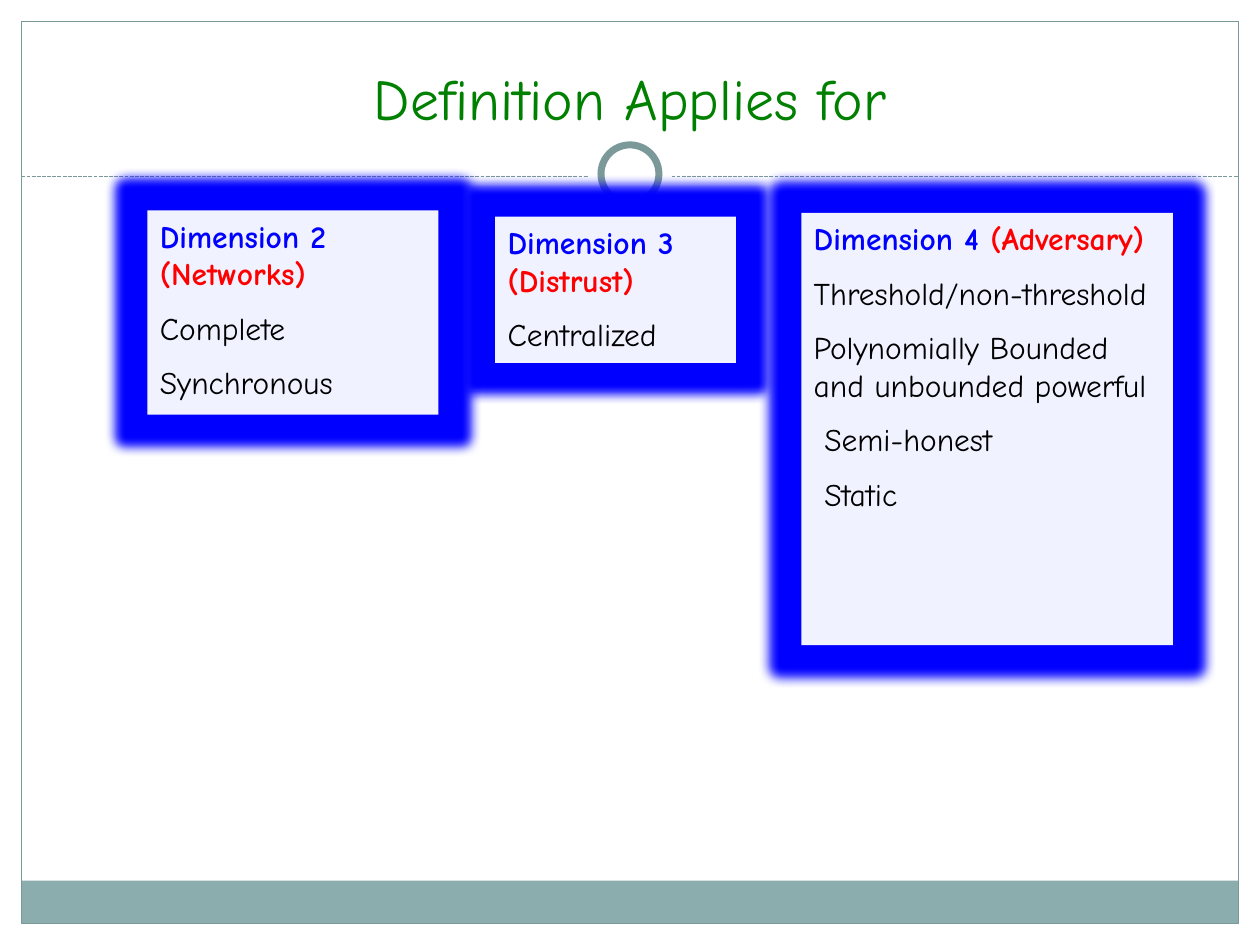
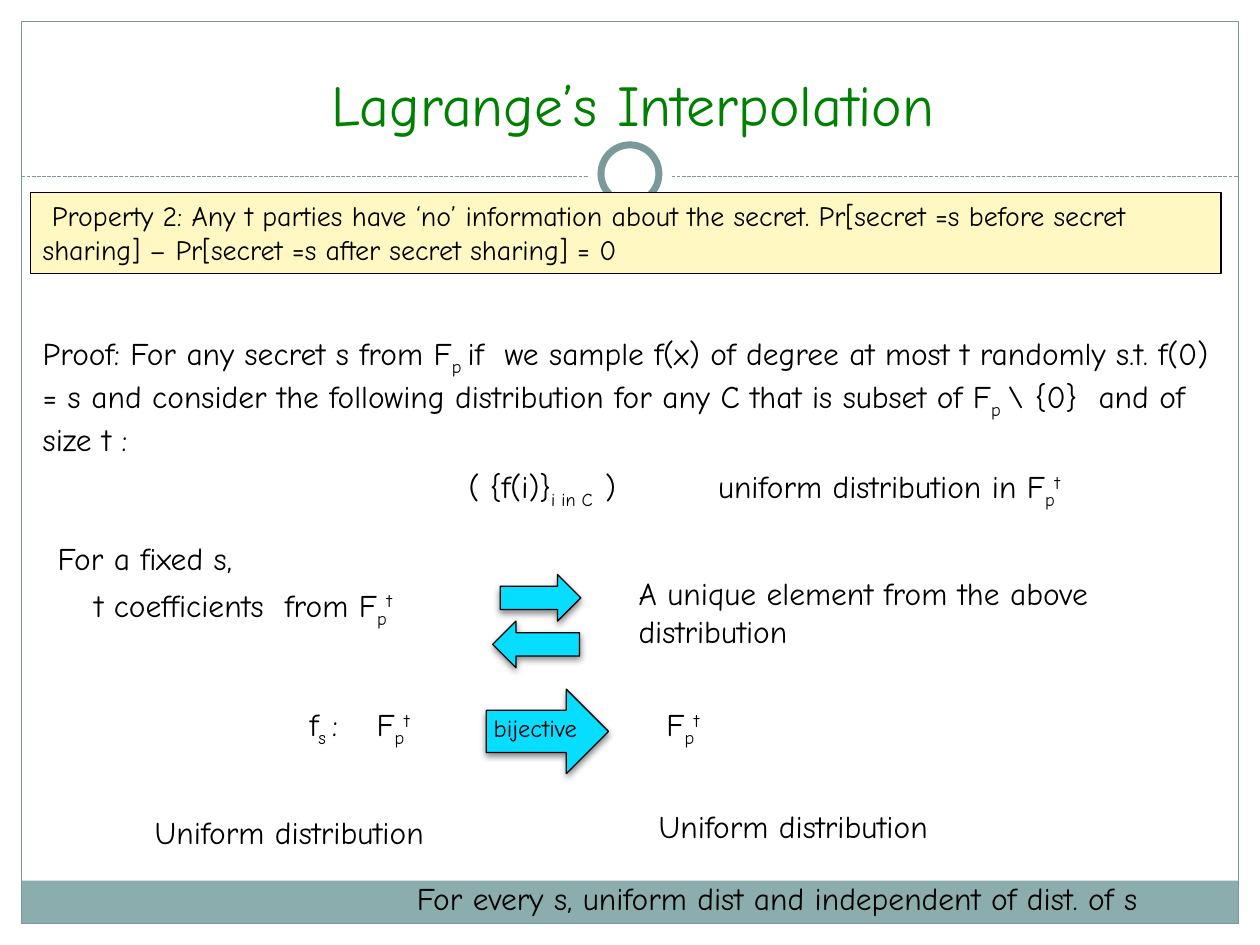
"""Build two slides on secret sharing: where the definition applies and a proof of property 2."""
from lxml.etree import SubElement
from pptx import Presentation
from pptx.dml.color import RGBColor
from pptx.enum.dml import MSO_LINE
from pptx.enum.shapes import MSO_CONNECTOR, MSO_SHAPE
from pptx.enum.text import MSO_ANCHOR, PP_ALIGN
from pptx.oxml.ns import qn
from pptx.util import Inches, Pt

WIDTH, HEIGHT = 10, 7.5
MARGIN = 0.17
RULE_Y = 1.4
FOOTER_HEIGHT = 0.34
FONT = "Comic Neue"
BLACK, WHITE, BLUE, RED, GREEN = "000000", "FFFFFF", "0000FF", "FF0000", "008000"
FRAME, FOOTER, PALE, YELLOW, CYAN = "7C999A", "8CADAE", "F0F2FF", "FFF8C2", "07DEFF"
BODY, SUB, SUP = 18, -25, 30

DIMENSIONS = [
    ("Dimension 2 ", "(Networks)", ["Complete", "Synchronous"], (1.17, 1.67, 2.31, 1.62)),
    ("Dimension 3 ", "(Distrust)", ["Centralized"], (3.93, 1.72, 1.91, 1.16)),
    ("Dimension 4 ", "(Adversary)",
     ["Threshold/non-threshold", "Polynomially Bounded and unbounded powerful",
      " Semi-honest", " Static"], (6.36, 1.69, 2.95, 3.43)),
]

PROPERTY = (" Property 2: Any t parties have ‘no’ information about the secret. "
            "Pr[secret =s before secret sharing] – Pr[secret =s after secret sharing] = 0")
FIELD_POWER = [("p", SUB), ("t", SUP)]
PROOF = [
    ([("Proof: For any secret s from F", 0), ("p ", SUB),
      ("if  we sample f(x) of degree at most t randomly s.t. f(0) = s and consider "
       "the following distribution for any C that is subset of F", 0),
      ("p ", SUB), ("\\ {0}  and of size t :", 0)], (0.24, 2.6, 9.45, 1.01), True),
    ([("( {f(i)}", 0), ("i in C  ", SUB), (")", 0)], (3.62, 3.66, 1.52, 0.4), False),
    ([("uniform distribution in F", 0), *FIELD_POWER], (5.6, 3.66, 3.25, 0.4), False),
    ([("For a fixed s,", 0)], (0.36, 4.23, 2.31, 0.4), True),
    ([("t coefficients  from F", 0), *FIELD_POWER], (0.65, 4.6, 3.11, 0.4), True),
    ([("A unique element from the above distribution", 0)], (4.97, 4.51, 4.86, 0.71), True),
    ([("f", 0), ("s ", SUB), (":", 0)], (2.36, 5.55, 0.46, 0.4), False),
    ([("F", 0), *FIELD_POWER], (2.89, 5.55, 0.52, 0.4), False),
    ([("F", 0), *FIELD_POWER], (5.19, 5.55, 0.52, 0.4), False),
    ([("Uniform distribution", 0)], (1.13, 6.4, 2.63, 0.4), False),
    ([("Uniform distribution", 0)], (5.13, 6.36, 2.63, 0.4), False),
    ([("For every s, uniform dist and independent of dist. of s", 0)],
     (3.21, 6.93, 6.66, 0.4), False),
]
ARROWS = [
    (MSO_SHAPE.RIGHT_ARROW, (3.97, 4.56, 0.64, 0.37)),
    (MSO_SHAPE.LEFT_ARROW, (3.91, 4.93, 0.69, 0.37)),
    (MSO_SHAPE.RIGHT_ARROW, (3.86, 5.47, 0.97, 0.67)),
]
BIJECTION = ([("bijective", 0)], (3.82, 5.61, 1.01, 0.34))


def color(value):
    return RGBColor.from_string(value)


def inches(box):
    return [Inches(length) for length in box]


def add_run(paragraph, text, size=BODY, tint=BLACK, bold=False, baseline=0):
    run = paragraph.add_run()
    run.text = text
    run.font.name, run.font.size, run.font.bold = FONT, Pt(size), bold
    run.font.color.rgb = color(tint)
    if baseline:
        run._r.get_or_add_rPr().set("baseline", str(baseline * 1000))


def add_block(slide, kind, box, fill=None, line=None, weight=0.75):
    block = slide.shapes.add_shape(kind, *inches(box))
    block.shadow.inherit = False
    if fill:
        block.fill.solid()
        block.fill.fore_color.rgb = color(fill)
    else:
        block.fill.background()
    if line:
        block.line.color.rgb = color(line)
        block.line.width = Pt(weight)
    else:
        block.line.fill.background()
    block.text_frame.word_wrap = True
    block.text_frame.vertical_anchor = MSO_ANCHOR.TOP
    block.text_frame.paragraphs[0].alignment = PP_ALIGN.LEFT
    return block


def add_effect(block, tag, tint, opacity=100, **settings):
    effects = block._element.spPr.find(qn("a:effectLst"))
    effect = SubElement(effects, qn(tag), {key: str(value) for key, value in settings.items()})
    shade = SubElement(effect, qn("a:srgbClr"), val=tint)
    SubElement(shade, qn("a:alpha"), val=str(opacity * 1000))


def add_text(slide, runs, box, wrap=False, size=BODY):
    frame = slide.shapes.add_textbox(*inches(box)).text_frame
    frame.word_wrap = wrap
    for text, baseline in runs:
        add_run(frame.paragraphs[0], text, size, baseline=baseline)


def add_ring(slide, diameter, **style):
    left, top = (WIDTH - diameter) / 2, 1.38 - diameter / 2
    add_block(slide, MSO_SHAPE.OVAL, (left, top, diameter, diameter), **style)


def add_titled_slide(deck, title, box):
    slide = deck.slides.add_slide(deck.slide_layouts[5])
    inner_width, bottom = WIDTH - 2 * MARGIN, HEIGHT - MARGIN
    add_block(slide, MSO_SHAPE.RECTANGLE,
              (MARGIN, bottom - FOOTER_HEIGHT, inner_width, FOOTER_HEIGHT), FOOTER)
    add_block(slide, MSO_SHAPE.RECTANGLE,
              (MARGIN, MARGIN, inner_width, HEIGHT - 2 * MARGIN), line=FRAME)
    rule = slide.shapes.add_connector(
        MSO_CONNECTOR.STRAIGHT, *inches((MARGIN, RULE_Y, WIDTH - MARGIN, RULE_Y)))
    rule.line.color.rgb = color(FRAME)
    rule.line.width = Pt(0.75)
    rule.line.dash_style = MSO_LINE.SQUARE_DOT
    SubElement(rule._element.spPr, qn("a:effectLst"))
    add_ring(slide, 0.67, fill=WHITE)
    add_ring(slide, 0.46, fill=WHITE, line=FRAME, weight=4)

    heading = slide.shapes.title
    heading.left, heading.top, heading.width, heading.height = inches(box)
    heading.text_frame.vertical_anchor = MSO_ANCHOR.BOTTOM
    heading.text_frame.paragraphs[0].alignment = PP_ALIGN.CENTER
    add_run(heading.text_frame.paragraphs[0], title, 33, GREEN)
    return slide


def add_dimension(slide, name, topic, choices, box):
    card = add_block(slide, MSO_SHAPE.RECTANGLE, box, PALE)
    add_effect(card, "a:glow", BLUE, rad=Inches(0.17))
    heading = card.text_frame.paragraphs[0]
    add_run(heading, name, tint=BLUE, bold=True)
    add_run(heading, topic, tint=RED, bold=True)
    for choice in choices:
        paragraph = card.text_frame.add_paragraph()
        paragraph.alignment = PP_ALIGN.LEFT
        paragraph.space_before = Pt(9.5)
        add_run(paragraph, choice)


def build_definition(deck):
    slide = add_titled_slide(deck, "Definition Applies for", (0.69, 0.18, 8.62, 0.92))
    for dimension in DIMENSIONS:
        add_dimension(slide, *dimension)


def build_interpolation(deck):
    slide = add_titled_slide(deck, "Lagrange’s Interpolation", (0.37, 0.23, 9.31, 0.92))
    statement = add_block(slide, MSO_SHAPE.RECTANGLE, (0.24, 1.53, 9.45, 0.64), YELLOW, BLACK)
    add_run(statement.text_frame.paragraphs[0], PROPERTY, 16)
    for runs, box, wrap in PROOF:
        add_text(slide, runs, box, wrap)
    for kind, box in ARROWS:
        arrow = add_block(slide, kind, box, CYAN, BLACK)
        add_effect(arrow, "a:outerShdw", BLACK, 45, blurRad=Pt(4), dist=Pt(2),
                   dir=90 * 60000, rotWithShape=0)
    add_text(slide, *BIJECTION, size=14)


def main():
    deck = Presentation()
    deck.slide_width, deck.slide_height = inches((WIDTH, HEIGHT))
    build_definition(deck)
    build_interpolation(deck)
    deck.save("out.pptx")


if __name__ == "__main__":
    main()
